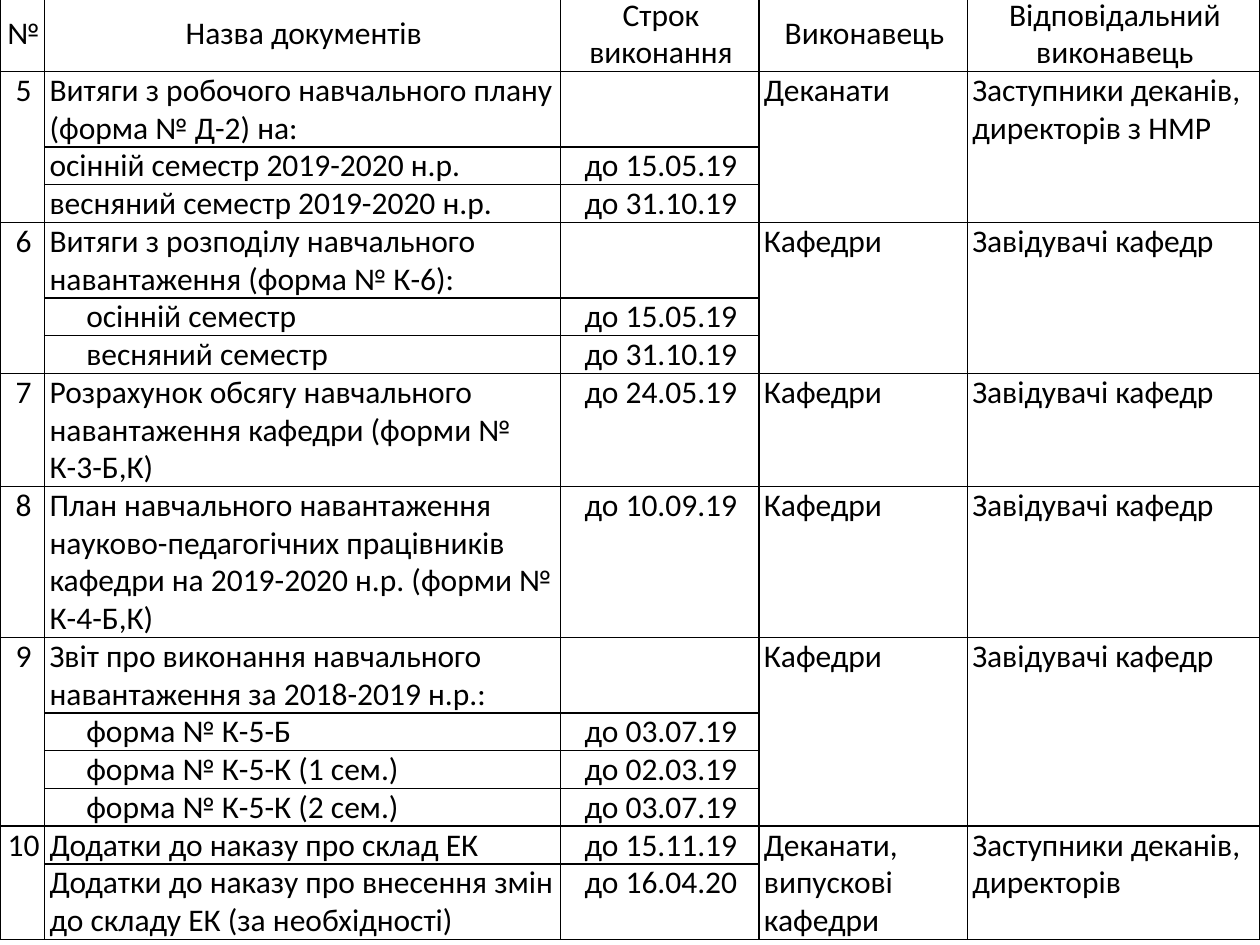
"""Build a slide with the schedule of study documents."""
from lxml.etree import SubElement
from pptx import Presentation
from pptx.dml.color import RGBColor
from pptx.enum.text import MSO_ANCHOR, PP_ALIGN
from pptx.oxml.ns import qn
from pptx.util import Cm, Pt

BLACK = RGBColor(0, 0, 0)
WHITE = RGBColor(255, 255, 255)
FONT, SIZE = "Calibri", Pt(18)
LINE, SPACING = 0.76, 0.98
INDENT = 0.74
WIDTHS = [0.9, 10.4, 4, 4.2, 5.9]
CENTRED = {0, 2}

HEAD = ["№", "Назва документів", "Строк виконання", "Виконавець", "Відповідальний виконавець"]
DEPT, CHIEF = "Кафедри", "Завідувачі кафедр"
GROUPS = [
    ("5", "Деканати", "Заступники деканів, директорів з НМР", [
        ("Витяги з робочого навчального плану (форма № Д-2) на:", "", 2, 0),
        ("осінній семестр 2019-2020 н.р.", "до 15.05.19", 1, 0),
        ("весняний семестр 2019-2020 н.р.", "до 31.10.19", 1, 0)]),
    ("6", DEPT, CHIEF, [
        ("Витяги з розподілу навчального навантаження (форма № К-6):", "", 2, 0),
        ("осінній семестр", "до 15.05.19", 1, INDENT),
        ("весняний семестр", "до 31.10.19", 1, INDENT)]),
    ("7", DEPT, CHIEF, [
        ("Розрахунок обсягу навчального навантаження кафедри (форми № К-3-Б,К)",
         "до 24.05.19", 3, 0)]),
    ("8", DEPT, CHIEF, [
        ("План навчального навантаження науково-педагогічних працівників кафедри "
         "на 2019-2020 н.р. (форми № К-4-Б,К)", "до 10.09.19", 4, 0)]),
    ("9", DEPT, CHIEF, [
        ("Звіт про виконання навчального навантаження за 2018-2019 н.р.:", "", 2, 0),
        ("форма № К-5-Б", "до 03.07.19", 1, INDENT),
        ("форма № К-5-К (1 сем.)", "до 02.03.19", 1, INDENT),
        ("форма № К-5-К (2 сем.)", "до 03.07.19", 1, INDENT)]),
    ("10", "Деканати, випускові кафедри", "Заступники деканів, директорів", [
        ("Додатки до наказу про склад ЕК", "до 15.11.19", 1, 0),
        ("Додатки до наказу про внесення змін до складу ЕК (за необхідності)",
         "до 16.04.20", 2, 0)]),
]


def style(cell):
    props = cell._tc.get_or_add_tcPr()
    for side in ("a:lnL", "a:lnR", "a:lnT", "a:lnB"):
        edge = SubElement(props, qn(side), w=str(Pt(1)))
        SubElement(SubElement(edge, qn("a:solidFill")), qn("a:srgbClr"), val=str(BLACK))
    cell.fill.solid()
    cell.fill.fore_color.rgb = WHITE
    cell.margin_left, cell.margin_right = Cm(0.1), Cm(0.05)
    cell.margin_top = cell.margin_bottom = 0


def write(cell, text, centred, indent=0):
    if not text:
        return
    para = cell.text_frame.paragraphs[0]
    para.alignment = PP_ALIGN.CENTER if centred else PP_ALIGN.LEFT
    para.line_spacing = SPACING
    if indent:
        para._p.get_or_add_pPr().set("marL", str(Cm(indent)))
    run = para.add_run()
    run.text = text
    run.font.name, run.font.size = FONT, SIZE
    run.font.color.rgb = BLACK


def main():
    deck = Presentation()
    deck.slide_width, deck.slide_height = Cm(25.4), Cm(19.05)
    slide = deck.slides.add_slide(deck.slide_layouts[6])
    lines = [2] + [item[2] for group in GROUPS for item in group[3]]
    frame = slide.shapes.add_table(len(lines), len(WIDTHS), 0, Cm(-0.08),
                                   Cm(sum(WIDTHS)), Cm(LINE * sum(lines)))
    table = frame.table
    table.first_row = table.horz_banding = False
    for col, width in zip(table.columns, WIDTHS):
        col.width = Cm(width)
    for row, count in zip(table.rows, lines):
        row.height = Cm(LINE * count)
    for cell in table.iter_cells():
        style(cell)

    for col, text in enumerate(HEAD):
        cell = table.cell(0, col)
        cell.vertical_anchor = MSO_ANCHOR.MIDDLE
        write(cell, text, True)

    top = 1
    for num, doer, chief, items in GROUPS:
        last = top + len(items) - 1
        for col, text in ((0, num), (3, doer), (4, chief)):
            cell = table.cell(top, col)
            if last > top:
                cell.merge(table.cell(last, col))
            write(cell, text, col in CENTRED)
        for row, (name, date, _, indent) in enumerate(items, top):
            write(table.cell(row, 1), name, False, indent)
            write(table.cell(row, 2), date, True)
        top = last + 1

    deck.save("out.pptx")


if __name__ == "__main__":
    main()
